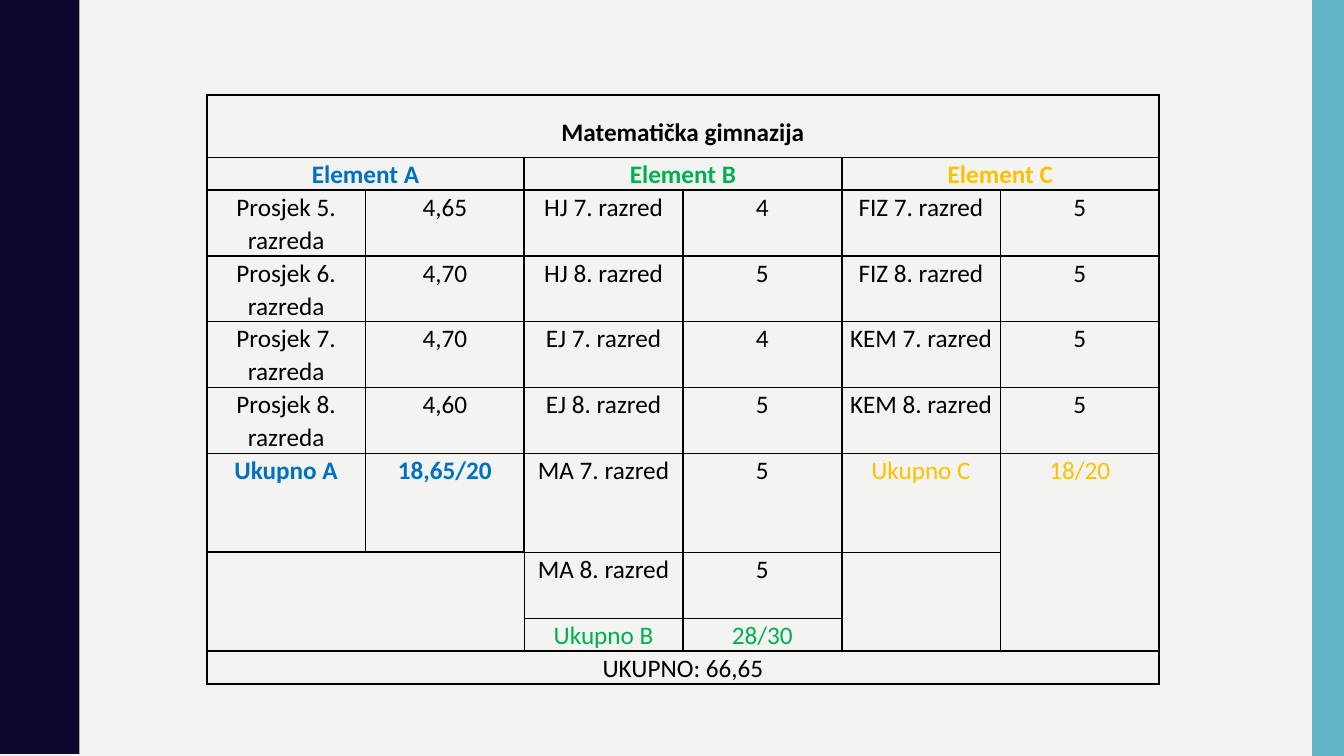
from dataclasses import dataclass

from lxml import etree
from pptx import Presentation
from pptx import util as u
from pptx.dml.color import RGBColor
from pptx.enum import shapes, text
from pptx.oxml import ns


@dataclass
class Theme:
    """Colours, font and sizes."""
    paper: str = "F3F3F2"
    navy: str = "0B082E"
    teal: str = "62B4C6"
    ink: str = "000000"
    blue: str = "0070C0"
    green: str = "00B050"
    gold: str = "FFC000"
    font: str = "Calibri"
    size: float = 18
    thin: float = 1
    thick: float = 1.5


WIDE, HIGH = 33.87, 19.05
LINE = 0.83
LINES = [2, 2, 2, 2, 3, 2, 1, 1]
CURVE = [(0, 1.98), (0.18, 1.99), (0.36, 2.01), (0.5, 2.04), (0.64, 2.07),
         (1.27, 2.36), (1.4, 2.41), (1.55, 2.44), (1.73, 2.46)]
ROWS = [
    ["Matematička gimnazija"],
    ["Element A", "", "Element B", "", "Element C"],
    ["Prosjek 5. razreda", "4,65", "HJ 7. razred", "4", "FIZ 7. razred", "5"],
    ["Prosjek 6. razreda", "4,70", "HJ 8. razred", "5", "FIZ 8. razred", "5"],
    ["Prosjek 7. razreda", "4,70", "EJ 7. razred", "4", "KEM 7. razred", "5"],
    ["Prosjek 8. razreda", "4,60", "EJ 8. razred", "5", "KEM 8. razred", "5"],
    ["Ukupno A", "18,65/20", "MA 7. razred", "5", "Ukupno C", "18/20"],
    ["", "", "MA 8. razred", "5"],
    ["", "", "Ukupno B", "28/30"],
    ["UKUPNO: 66,65"],
]
SPANS = [(0, 0, 0, 5), (1, 0, 1, 1), (1, 2, 1, 3), (1, 4, 1, 5),
         (6, 5, 8, 5), (7, 0, 8, 1), (7, 4, 8, 4), (9, 0, 9, 5)]
TOTALS = {(6, 0), (6, 1), (6, 4), (6, 5), (8, 2), (8, 3)}
BOLD = {(0, 0), (1, 0), (1, 2), (1, 4), (6, 0), (6, 1)}
HEAVY = {(6, 0), (6, 1), (8, 2), (8, 3), (8, 4), (8, 5)}


class Deck:
    """Draws styled elements on the current slide."""

    def __init__(self, theme):
        self.theme = theme
        self.prs = Presentation()
        self.prs.slide_width, self.prs.slide_height = u.Cm(WIDE), u.Cm(HIGH)
        self.slide = self.prs.slides.add_slide(self.prs.slide_layouts[6])
        self.paint(self.slide.background.fill, theme.paper)

    def paint(self, fill, hue):
        fill.solid()
        fill.fore_color.rgb = RGBColor.from_string(hue)

    def plain(self, shape, hue):
        self.paint(shape.fill, hue)
        shape.line.fill.background()
        shape.shadow.inherit = False

    def bar(self, left, top, width, height, hue):
        size = [u.Cm(n) for n in (left, top, width, height)]
        self.plain(self.slide.shapes.add_shape(shapes.MSO_SHAPE.RECTANGLE, *size), hue)

    def wave(self, hue, count=5):
        step = HIGH / count
        cycle = CURVE + [(step / 2, 2.47)] + [(step - y, x) for y, x in CURVE[:0:-1]]
        edge = [(x, y + i * step) for i in range(count) for y, x in cycle]
        edge += [(CURVE[0][1], HIGH), (0, HIGH)]
        pen = self.slide.shapes.build_freeform(0, 0, scale=u.Cm(1))
        pen.add_line_segments(edge)
        self.plain(pen.convert_to_shape(), hue)

    def border(self, cell, widths):
        props = cell._tc.get_or_add_tcPr()
        for side, width in zip("LRTB", widths):
            line = etree.SubElement(props, ns.qn("a:ln" + side), w=str(u.Pt(width)))
            fill = etree.SubElement(line, ns.qn("a:solidFill"))
            etree.SubElement(fill, ns.qn("a:srgbClr"), val=self.theme.ink)

    def weights(self, row, col):
        thin, thick = self.theme.thin, self.theme.thick
        inner = row in (7, 8)
        left = thick if col % 2 == 0 and not (inner and col == 2) else thin
        right = thick if col % 2 and not (inner and col == 1) else thin
        top = thick if row in (0, 9) or (row - 1, col) in HEAVY else thin
        base = thick if row == 9 or (row, col) in HEAVY else thin
        return left, right, top, base

    def label(self, cell, words, hue, bold):
        cell.margin_left = cell.margin_right = u.Cm(0.18)
        cell.margin_top = cell.margin_bottom = 0
        cell.text = words
        para = cell.text_frame.paragraphs[0]
        para.alignment = text.PP_ALIGN.CENTER
        para.line_spacing = 1.07
        font = para.font
        font.name, font.size, font.bold = self.theme.font, u.Pt(self.theme.size), bold
        font.color.rgb = RGBColor.from_string(hue)

    def table(self, left, top, width, rows):
        tall = [1.57, LINE] + [LINE * n for n in LINES]
        frame = self.slide.shapes.add_table(
            len(rows), 6, u.Cm(left), u.Cm(top), u.Cm(width), u.Cm(sum(tall)))
        grid = frame.table
        grid.first_row = grid.horz_banding = False
        for row, height in zip(grid.rows, tall):
            row.height = u.Cm(height)
        for col in grid.columns:
            col.width = u.Cm(width / 6)
        hues = [self.theme.blue, self.theme.green, self.theme.gold]
        for r, row in enumerate(rows):
            for c in range(6):
                cell = grid.cell(r, c)
                tint = r == 1 or (r, c) in TOTALS
                words = row[c] if c < len(row) else ""
                self.label(cell, words, hues[c // 2] if tint else self.theme.ink,
                           (r, c) in BOLD)
                self.border(cell, self.weights(r, c))
                cell.fill.background()
        grid.cell(0, 0).margin_top = u.Cm(0.51)
        for r, c, end, last in SPANS:
            grid.cell(r, c).merge(grid.cell(end, last))


def main():
    theme = Theme()
    deck = Deck(theme)
    deck.wave(theme.navy)
    deck.bar(33.07, 0, 0.8, HIGH, theme.teal)
    deck.table(5.21, 2.39, 24, ROWS)
    deck.prs.save("out.pptx")


if __name__ == "__main__":
    main()
